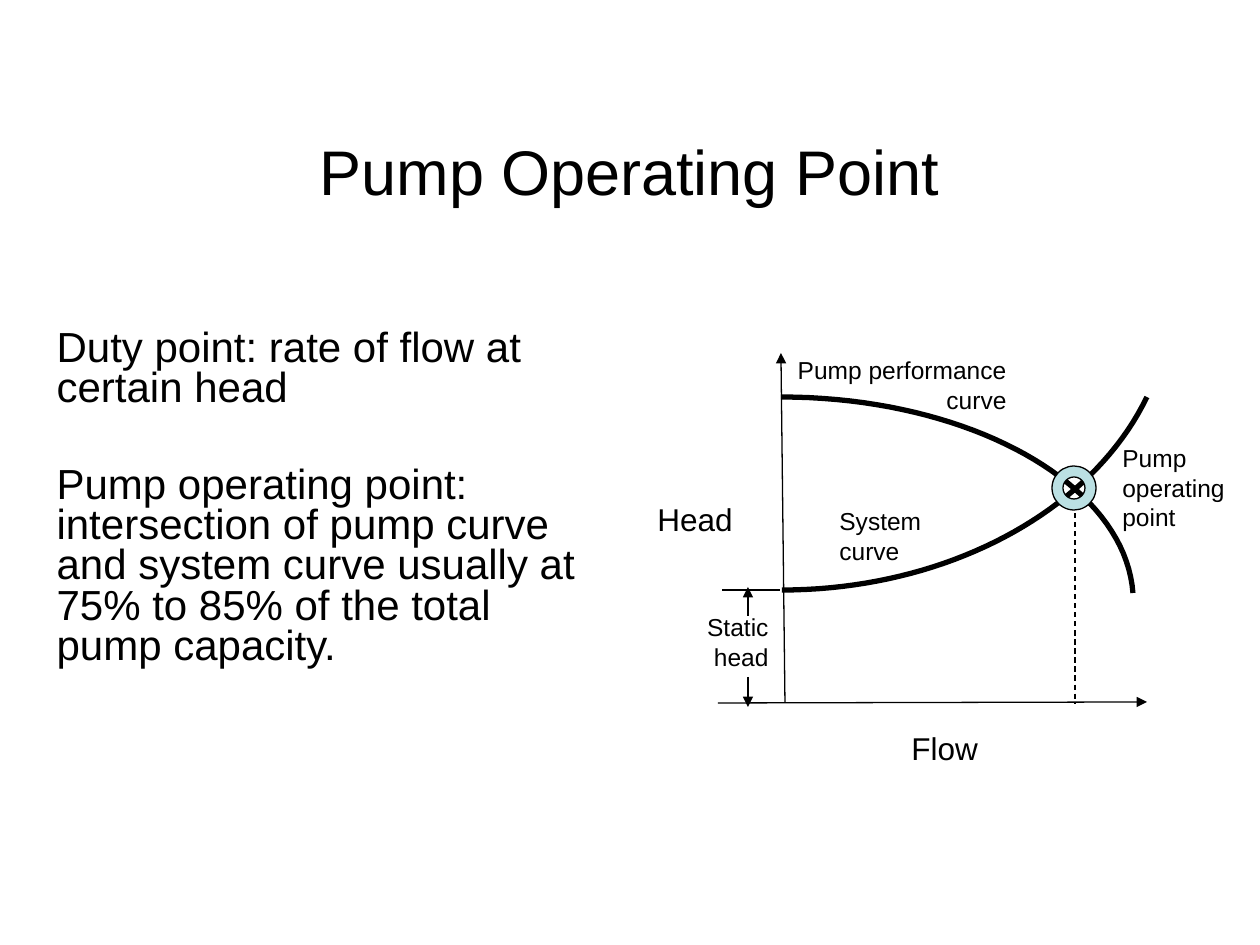
from dataclasses import dataclass

from lxml import etree
from pptx import Presentation
from pptx import util as u
from pptx.dml.color import RGBColor
from pptx.enum import dml, shapes, text
from pptx.oxml import ns


@dataclass(frozen=True)
class Theme:
    ink: RGBColor = RGBColor(0, 0, 0)
    marker: RGBColor = RGBColor(0xBB, 0xE0, 0xE3)
    font: str = "Arial"
    title: int = 36
    body: int = 24
    axis: int = 18
    label: int = 14
    thin: float = 0.75
    thick: int = 3


theme = Theme()
PX = 914400 / 126
LEFT, CENTER, RIGHT = text.PP_ALIGN.LEFT, text.PP_ALIGN.CENTER, text.PP_ALIGN.RIGHT


def px(*values):
    return [u.Emu(round(v * PX)) for v in values]


def write(sp, lines, size, align=LEFT, anchor=text.MSO_ANCHOR.TOP, spacing=1.0, gap=0):
    tf = sp.text_frame
    tf.word_wrap = True
    tf.auto_size = text.MSO_AUTO_SIZE.NONE
    tf.vertical_anchor = anchor
    for i, line in enumerate(lines):
        p = tf.paragraphs[0] if i == 0 else tf.add_paragraph()
        p.alignment = align
        p.line_spacing = spacing
        p.space_before = u.Pt(gap if i else 0)
        r = p.add_run()
        r.text = line
        r.font.name = theme.font
        r.font.size = u.Pt(size)
        r.font.color.rgb = theme.ink


prs = Presentation()
prs.slide_width, prs.slide_height = px(1260, 945)
s = prs.slides.add_slide(prs.slide_layouts[0])

title, body = s.placeholders
title.left, title.top, title.width, title.height = px(94, 126, 1071, 89)
write(title, ["Pump Operating Point"], theme.title, CENTER, text.MSO_ANCHOR.MIDDLE)

body.left, body.top, body.width, body.height = px(44, 324, 576, 427)
write(body, [
    "Duty point: rate of flow at certain head",
    "Pump operating point: intersection of pump curve and system curve "
    "usually at 75% to 85% of the total pump capacity.",
], theme.body, spacing=0.8, gap=32)

diagram = s.shapes.add_group_shape().shapes

curves = [
    [(781, 397), (970, 397), (1125, 484), (1133, 593)],
    [(782, 590), (945, 590), (1091, 513), (1147, 397)],
]
STEPS = 40
for a, b, c, d in curves:
    points = []
    for i in range(STEPS + 1):
        t = i / STEPS
        weights = ((1 - t) ** 3, 3 * t * (1 - t) ** 2, 3 * t * t * (1 - t), t ** 3)
        points.append(px(*[sum(w * q[k] for w, q in zip(weights, (a, b, c, d))) for k in (0, 1)]))
    builder = diagram.build_freeform(*points[0])
    builder.add_line_segments(points[1:], close=False)
    sp = builder.convert_to_shape()
    sp.shadow.inherit = False
    sp.fill.background()
    sp.line.color.rgb = theme.ink
    sp.line.width = u.Pt(theme.thick)

labels = [
    (899, 723, 97, 53, ["Flow"], theme.axis, LEFT),
    (645, 494, 161, 53, ["Head"], theme.axis, LEFT),
    (664, 606, 117, 71, ["Static", "head"], theme.label, RIGHT),
    (741, 349, 278, 71, ["Pump performance curve"], theme.label, RIGHT),
    (827, 500, 117, 71, ["System curve"], theme.label, LEFT),
    (1110, 437, 150, 96, ["Pump operating point"], theme.label, LEFT),
]
for x, y, w, h, lines, size, align in labels:
    write(diagram.add_textbox(*px(x, y, w, h)), lines, size, align)

marker = diagram.add_shape(shapes.MSO_SHAPE.DONUT, *px(1052, 466, 44, 44))
marker.adjustments[0] = 0.25
marker.shadow.inherit = False
marker.fill.solid()
marker.fill.fore_color.rgb = theme.marker
marker.line.color.rgb = theme.ink
marker.line.width = u.Pt(theme.thin)

connectors = [
    (785, 702, 781, 353, "arrow"),
    (718, 703, 1147, 702, "arrow"),
    (748, 616, 748, 587, "arrow"),
    (748, 677, 748, 707, "arrow"),
    (780, 590, 722, 590, "plain"),
    (1075, 513, 1075, 703, "dash"),
]
for x1, y1, x2, y2, style in connectors:
    line = diagram.add_connector(shapes.MSO_CONNECTOR.STRAIGHT, *px(x1, y1, x2, y2))
    line.line.color.rgb = theme.ink
    line.line.width = u.Pt(theme.thin)
    if style == "dash":
        line.line.dash_style = dml.MSO_LINE.DASH
    if style == "arrow":
        etree.SubElement(line.line._get_or_add_ln(), ns.qn("a:tailEnd"), type="triangle")
    etree.SubElement(line._element.spPr, ns.qn("a:effectLst"))

prs.save("out.pptx")
